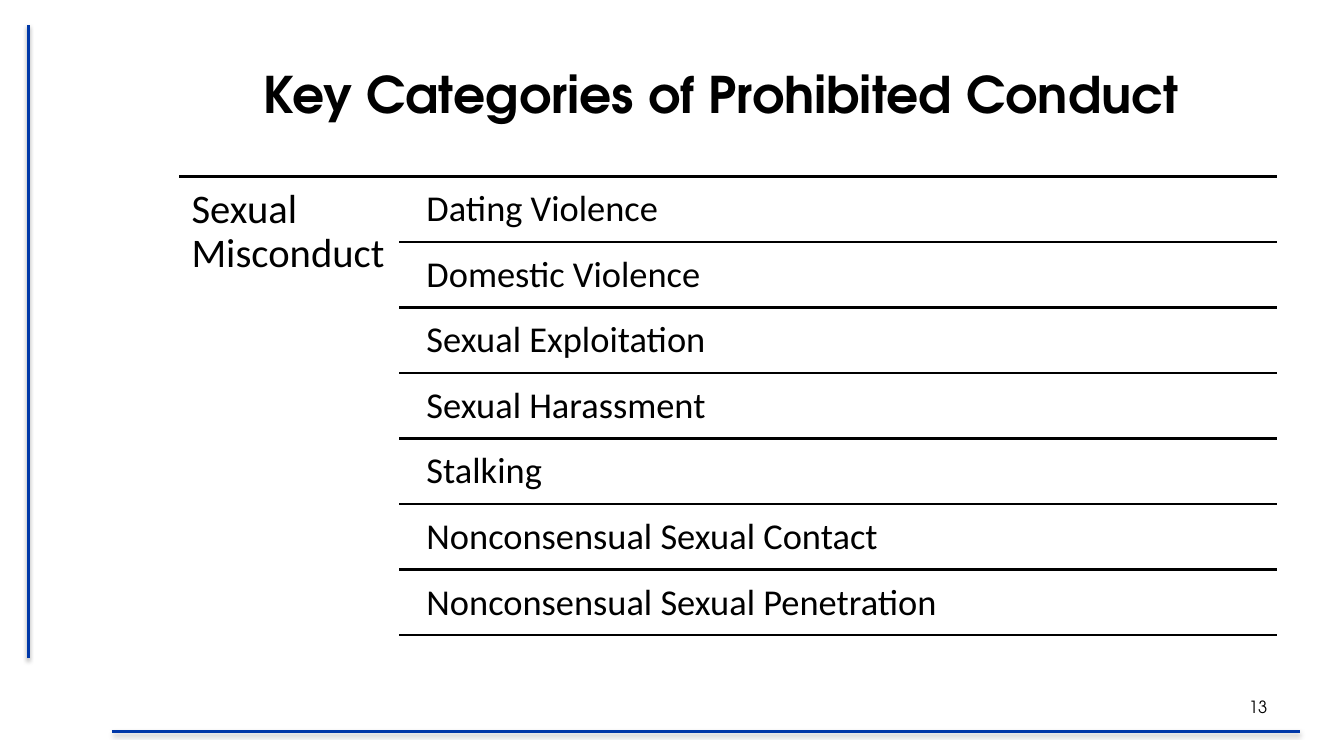
import pptx
import pptx.dml.color
import pptx.enum.shapes
import pptx.enum.text
import pptx.oxml
import pptx.oxml.ns
import pptx.util

Inches = pptx.util.Inches
Align = pptx.enum.text.PP_ALIGN
Anchor = pptx.enum.text.MSO_ANCHOR

# Content
TITLE = "Key Categories of Prohibited Conduct "
GROUP = "Sexual Misconduct"
CATEGORIES = [
    "Dating Violence",
    "Domestic Violence",
    "Sexual Exploitation",
    "Sexual Harassment",
    "Stalking",
    "Nonconsensual Sexual Contact",
    "Nonconsensual Sexual Penetration",
]
PAGE_NUMBER = "13"

THEME = {
    "ink": "000000",
    "accent": "0038A8",
    "rule_width": 2,
    "title": {"name": "TeX Gyre Adventor", "size": 36, "bold": True},
    "number": {"name": "TeX Gyre Adventor", "size": 12, "bold": False},
    "group": {"name": "Calibri", "size": 29, "bold": False},
    "category": {"name": "Calibri", "size": 26, "bold": False},
}

# Grid, in inches
WIDTH, HEIGHT = 13.33, 7.5
LEFT, RIGHT = 1.78, 12.67
RULE_LEFT, CATEGORY_LEFT = 3.96, 4.12
TOP, ROW = 1.75, 0.65
ROW_GAP = 0.03
ACCENT_RULES = [(0.28, 6.53, 0.28, 0.25), (1.11, 7.26, 12.89, 7.26)]

SHADOW = (
    '<a:outerShdw blurRad="39400" dist="20300" dir="5400000" rotWithShape="0">'
    '<a:srgbClr val="000000"><a:alpha val="38000"/></a:srgbClr></a:outerShdw>'
)


def draw_rule(slide, ends, color, effect=""):
    line = slide.shapes.add_connector(
        pptx.enum.shapes.MSO_CONNECTOR.STRAIGHT, *map(Inches, ends))
    line.line.color.rgb = pptx.dml.color.RGBColor.from_string(color)
    line.line.width = pptx.util.Pt(THEME["rule_width"])
    namespace = pptx.oxml.ns.nsdecls("a")
    line._element.spPr.append(pptx.oxml.parse_xml(
        f"<a:effectLst {namespace}>{effect}</a:effectLst>"))


def fill_text(shape, box, text, style, inset=(0.1, 0.05), anchor=Anchor.TOP,
              align=Align.LEFT, spacing=1.0):
    shape.left, shape.top, shape.width, shape.height = map(Inches, box)
    frame = shape.text_frame
    side, end = map(Inches, inset)
    frame_format = {
        "word_wrap": True, "auto_size": pptx.enum.text.MSO_AUTO_SIZE.NONE,
        "vertical_anchor": anchor, "margin_left": side, "margin_right": side,
        "margin_top": end, "margin_bottom": end,
    }
    for name, value in frame_format.items():
        setattr(frame, name, value)
    frame.text = text
    paragraph = frame.paragraphs[0]
    paragraph.alignment = align
    paragraph.line_spacing = spacing
    font = paragraph.runs[0].font
    for name, value in THEME[style].items():
        setattr(font, name, pptx.util.Pt(value) if name == "size" else value)
    font.color.rgb = pptx.dml.color.RGBColor.from_string(THEME["ink"])


def add_text(slide, box, *args, **options):
    shape = slide.shapes.add_textbox(*map(Inches, box))
    fill_text(shape, box, *args, **options)


def main():
    presentation = pptx.Presentation()
    presentation.slide_width = Inches(WIDTH)
    presentation.slide_height = Inches(HEIGHT)
    slide = presentation.slides.add_slide(presentation.slide_layouts[5])

    # Frame, title and page number
    for ends in ACCENT_RULES:
        draw_rule(slide, ends, THEME["accent"], SHADOW)
    fill_text(slide.shapes.title, (LEFT, 0.3, RIGHT - LEFT, 1.25), TITLE, "title",
              anchor=Anchor.MIDDLE, align=Align.CENTER)
    add_text(slide, (RIGHT - 0.81, 6.81, 0.81, 0.4), PAGE_NUMBER, "number",
             anchor=Anchor.MIDDLE, align=Align.RIGHT)

    # Group heading beside the list
    draw_rule(slide, (LEFT, TOP, RIGHT, TOP), THEME["ink"])
    add_text(slide, (LEFT, TOP, RULE_LEFT - LEFT, ROW * len(CATEGORIES) + ROW_GAP),
             GROUP, "group", inset=(0.12, 0.12), spacing=0.9)

    # One row per category, closed by a rule
    for index, category in enumerate(CATEGORIES):
        top = TOP + index * ROW
        bottom = top + ROW
        box = (CATEGORY_LEFT, top + ROW_GAP, RIGHT - CATEGORY_LEFT, ROW - ROW_GAP)
        add_text(slide, box, category, "category", inset=(0.11, 0.11), spacing=0.9)
        draw_rule(slide, (RULE_LEFT, bottom, RIGHT, bottom), THEME["ink"])

    presentation.save("out.pptx")


if __name__ == "__main__":
    main()
